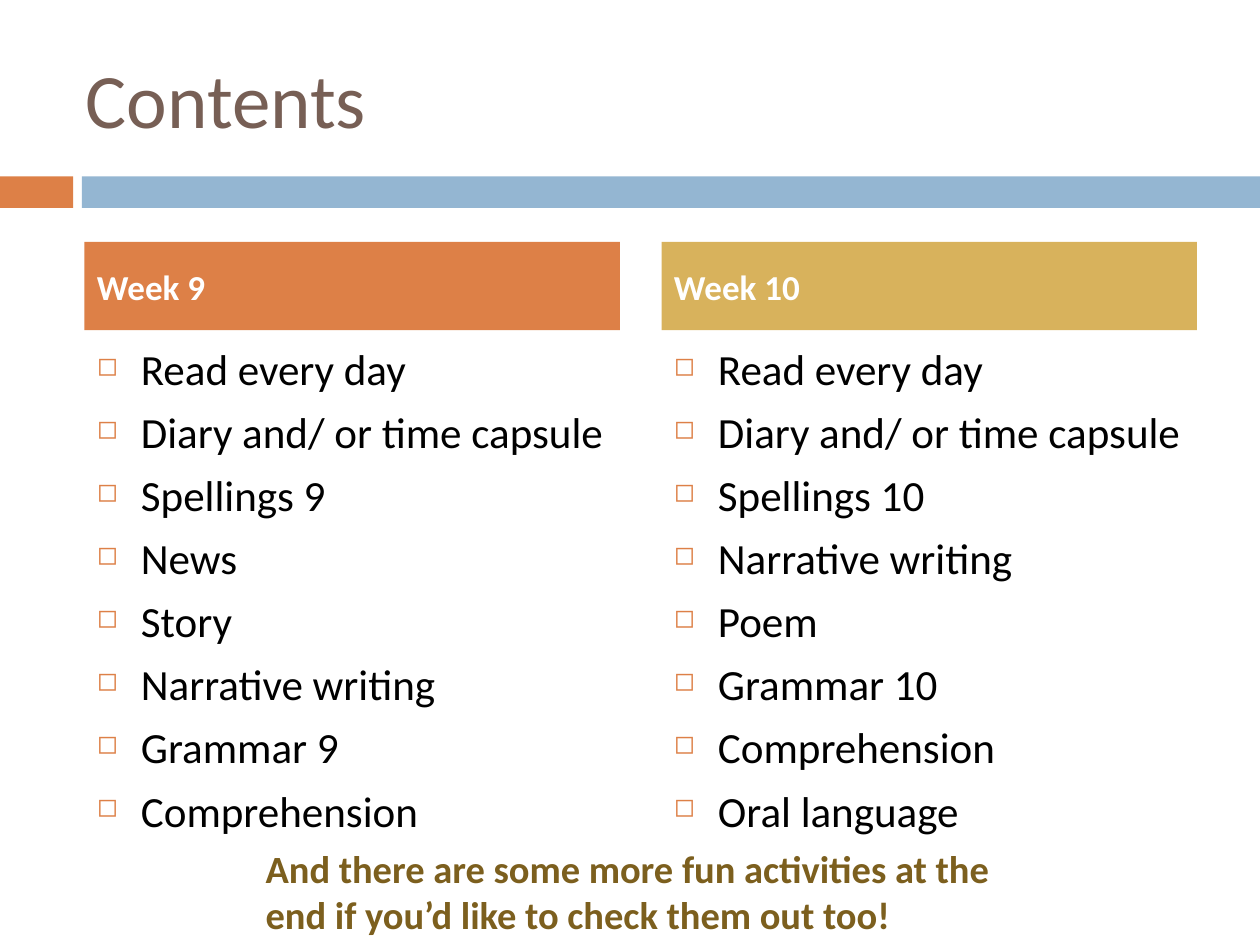
from lxml import etree
from pptx import Presentation
from pptx import util as u
from pptx.dml.color import RGBColor
from pptx.enum import shapes, text
from pptx.oxml.ns import qn

ORANGE = RGBColor(0xDD, 0x80, 0x47)
BLUE = RGBColor(0x94, 0xB6, 0xD2)
GOLD = RGBColor(0xD8, 0xB2, 0x5C)
BROWN = RGBColor(0x77, 0x5F, 0x55)
OLIVE = RGBColor(0x7C, 0x5F, 0x1E)
BLACK = RGBColor(0, 0, 0)
WHITE = RGBColor(0xFF, 0xFF, 0xFF)

COLUMNS, ROWS = 100, 75


class Deck:
    """Style and current slide; lengths are columns and rows of the grid."""

    font = "Calibri"
    indent = u.Inches(0.35)

    def __init__(self):
        self.prs = Presentation()
        self.prs.slide_width, self.prs.slide_height = u.Inches(10), u.Inches(7.5)
        self.s = self.prs.slides.add_slide(self.prs.slide_layouts[5])

    def box(self, col, row, cols, rows):
        x, y = self.prs.slide_width / COLUMNS, self.prs.slide_height / ROWS
        return [round(v) for v in (col * x, row * y, cols * x, rows * y)]

    def set_text(self, sp, lines, size, color, bold=False, before=0,
                 anchor=text.MSO_ANCHOR.TOP):
        tf = sp.text_frame
        tf.word_wrap = True
        tf.auto_size = text.MSO_AUTO_SIZE.NONE
        tf.vertical_anchor = anchor
        tf.text = "\n".join(lines)
        for p in tf.paragraphs:
            p.alignment = text.PP_ALIGN.LEFT
            p.space_before = u.Pt(before)
            for r in p.runs:
                r.font.name, r.font.size = self.font, u.Pt(size)
                r.font.bold, r.font.color.rgb = bold, color
        return tf

    def title(self, words, *area):
        sp = self.s.shapes.title
        sp.left, sp.top, sp.width, sp.height = self.box(*area)
        self.set_text(sp, [words], 44, BROWN, anchor=text.MSO_ANCHOR.MIDDLE)

    def bar(self, fill, *area):
        sp = self.s.shapes.add_shape(shapes.MSO_SHAPE.RECTANGLE, *self.box(*area))
        sp.shadow.inherit = False
        sp.fill.solid()
        sp.fill.fore_color.rgb = fill
        sp.line.fill.background()
        return sp

    def heading(self, words, fill, *area):
        self.set_text(self.bar(fill, *area), [words], 20, WHITE, bold=True,
                      before=7, anchor=text.MSO_ANCHOR.MIDDLE)

    def textbox(self, lines, size, color, *area, **style):
        sp = self.s.shapes.add_textbox(*self.box(*area))
        return self.set_text(sp, lines, size, color, **style)

    def bullets(self, lines, *area):
        tf = self.textbox(lines, 24.6, BLACK, *area, before=6.5)
        for p in tf.paragraphs:
            pPr = p._p.get_or_add_pPr()
            pPr.set("marL", str(self.indent))
            pPr.set("indent", str(-self.indent))
            clr = etree.SubElement(pPr, qn("a:buClr"))
            etree.SubElement(clr, qn("a:srgbClr"), val=str(ORANGE))
            etree.SubElement(pPr, qn("a:buSzPct"), val="60000")
            etree.SubElement(pPr, qn("a:buChar"), char="◻")


def main():
    deck = Deck()

    # Title and divider band
    deck.bar(ORANGE, 0, 14, 5.8, 2.5)
    deck.bar(BLUE, 6.5, 14, 93.5, 2.5)
    deck.title("Contents", 5.8, 3, 89.2, 9.5)

    # One column per week
    weeks = [
        ("Week 9", ORANGE, 6.7, 44.1,
         ["Read every day", "Diary and/ or time capsule", "Spellings 9", "News",
          "Story", "Narrative writing", "Grammar 9", "Comprehension"]),
        ("Week 10", GOLD, 52.5, 44.7,
         ["Read every day", "Diary and/ or time capsule", "Spellings 10",
          "Narrative writing", "Poem", "Grammar 10", "Comprehension",
          "Oral language"]),
    ]
    for name, fill, col, cols, tasks in weeks:
        deck.bullets(tasks, col, 26.7, cols, 39.2)
        deck.heading(name, fill, col, 19.2, 42.5, 7)

    # Closing note
    deck.textbox(["And there are some more fun activities at the end "
                  "if you’d like to check them out too!"],
                 22, OLIVE, 20.1, 66.6, 62.2, 8.4, bold=True)

    deck.prs.save("out.pptx")


if __name__ == "__main__":
    main()
